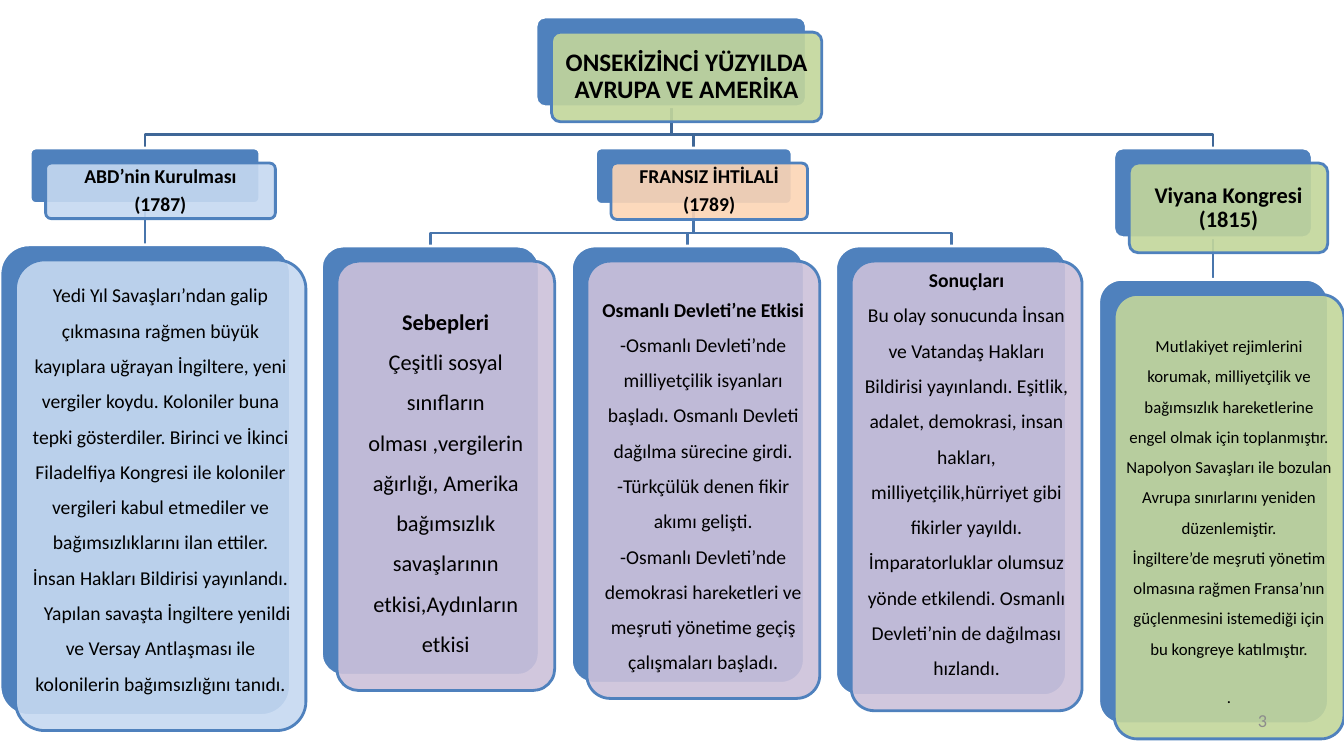
import dataclasses
import pptx
import pptx.dml.color
import pptx.enum.shapes
import pptx.enum.text
import pptx.oxml.ns
import pptx.util
import lxml.etree

Cm = pptx.util.Cm
Pt = pptx.util.Pt
ALIGN = pptx.enum.text.PP_ALIGN
MIDDLE = pptx.enum.text.MSO_ANCHOR.MIDDLE
qn = pptx.oxml.ns.qn


@dataclasses.dataclass(frozen=True)
class Theme:
    font: str = "Calibri"
    text: str = "000000"
    muted: str = "8C8C8C"
    white: str = "FFFFFF"
    accent: str = "4F81BD"
    trunk: str = "3F6797"
    branch: str = "4875AC"
    green: str = "C3D69B"
    blue: str = "C6D9F1"
    orange: str = "FCD5B5"
    purple: str = "CCC1DA"
    title: int = 18
    large: int = 16
    medium: int = 14
    small: int = 12
    number: int = 13
    line: int = 2


@dataclasses.dataclass(frozen=True)
class Box:
    left: float
    top: float
    width: float
    height: float

    @property
    def center(self):
        return self.left + self.width / 2

    @property
    def bottom(self):
        return self.top + self.height

    def moved(self, dx, dy):
        return Box(self.left + dx, self.top + dy, self.width, self.height)

    def inset(self, d):
        return Box(self.left + d, self.top + d, self.width - 2 * d, self.height - 2 * d)

    def emu(self):
        return [Cm(v) for v in (self.left, self.top, self.width, self.height)]


class Chart:
    def __init__(self, slide, theme):
        self.slide = slide
        self.theme = theme

    def rgb(self, value):
        return pptx.dml.color.RGBColor.from_string(value)

    def outline(self, line, color):
        line.color.rgb = self.rgb(color)
        line.width = Pt(self.theme.line)

    def panel(self, box, fill, line, alpha=None):
        kind = pptx.enum.shapes.MSO_SHAPE.ROUNDED_RECTANGLE
        sp = self.slide.shapes.add_shape(kind, *box.emu())
        sp.adjustments[0] = 0.1
        sp.shadow.inherit = False
        sp.fill.solid()
        sp.fill.fore_color.rgb = self.rgb(fill)
        if alpha:
            color = sp.element.spPr.find(qn("a:solidFill"))[0]
            lxml.etree.SubElement(color, qn("a:alpha")).set("val", str(alpha * 1000))
        self.outline(sp.line, line)
        return sp

    def card(self, box, fill):
        self.panel(box, self.theme.accent, self.theme.white)
        return self.panel(box.moved(0.39, 0.38), fill, self.theme.accent, 90)

    def set_text(self, sp, lines, size, bold=0, spacing=0.9, foot=0):
        tf = sp.text_frame
        tf.word_wrap = True
        tf.auto_size = pptx.enum.text.MSO_AUTO_SIZE.NONE
        tf.vertical_anchor = MIDDLE
        margin = size * 0.0106
        tf.margin_left = tf.margin_right = tf.margin_top = Cm(margin)
        tf.margin_bottom = Cm(margin + foot)
        tf.text = "\n".join(lines)
        for i, p in enumerate(tf.paragraphs):
            self.style(p, size, self.theme.text, ALIGN.CENTER, i < bold)
            p.line_spacing = spacing
            p.space_before = Pt(0)
            p.space_after = Pt(size * 0.35 if spacing < 1 else 0)
        return tf.paragraphs

    def style(self, p, size, color, align, bold=False):
        p.alignment = align
        for r in p.runs:
            r.font.name = self.theme.font
            r.font.size = Pt(size)
            r.font.bold = bold
            r.font.color.rgb = self.rgb(color)

    def heading(self, box, fill, size, lines):
        self.set_text(self.card(box, fill), lines, size, bold=len(lines))

    def detail(self, box, fill, size, lines, bold=0, foot=0):
        return self.set_text(self.card(box, fill), lines, size, bold, 1.5, foot)

    def title(self, box, fill, text):
        self.card(box, fill)
        sp = self.slide.shapes.title
        area = box.moved(0.39, 0.38).inset(0.07)
        sp.left, sp.top, sp.width, sp.height = area.emu()
        self.set_text(sp, [text], self.theme.title, bold=1)
        self.slide.shapes.element.append(sp.element)

    def link(self, parent, child, color):
        x, y = Cm(parent.center), Cm(parent.bottom)
        end_x, end_y = Cm(child.center), Cm(child.top)
        if abs(parent.center - child.center) < 0.1:
            kind = pptx.enum.shapes.MSO_CONNECTOR.STRAIGHT
            sp = self.slide.shapes.add_connector(kind, x, y, x, end_y)
            lxml.etree.SubElement(sp.element.spPr, qn("a:effectLst"))
        else:
            bend = Cm(child.top - 0.33)
            elbow = self.slide.shapes.build_freeform(x, y)
            elbow.add_line_segments([(x, bend), (end_x, bend), (end_x, end_y)], close=False)
            sp = elbow.convert_to_shape()
            sp.fill.background()
            sp.shadow.inherit = False
        self.outline(sp.line, color)

    def page_number(self, box, text):
        sp = self.slide.shapes.add_textbox(*box.emu())
        tf = sp.text_frame
        tf.word_wrap = True
        tf.vertical_anchor = MIDDLE
        tf.text = text
        self.style(tf.paragraphs[0], self.theme.number, self.theme.muted, ALIGN.RIGHT)


def main():
    prs = pptx.Presentation()
    prs.slide_width, prs.slide_height = Cm(33.87), Cm(19.05)
    t = Theme()
    s = Chart(prs.slides.add_slide(prs.slide_layouts[5]), t)

    root = Box(13.51, 0.43, 6.81, 2.26)
    usa = Box(0.76, 3.73, 5.79, 1.4)
    france = Box(15.01, 3.73, 4.95, 1.42)
    vienna = Box(28.07, 3.73, 5, 2.26)
    usa_text = Box(0, 6.17, 7.32, 11.86)
    causes = Box(8.1, 6.2, 5.49, 10.82)
    ottoman = Box(14.4, 6.2, 5.87, 11.02)
    results = Box(21.06, 6.2, 5.82, 11.33)
    vienna_text = Box(27.69, 7.04, 5.79, 11.2)

    for child in (vienna, france, usa):
        s.link(root, child, t.trunk)
    for parent, child in ((vienna, vienna_text), (france, results), (france, ottoman),
                          (france, causes), (usa, usa_text)):
        s.link(parent, child, t.branch)

    s.title(root, t.green, "ONSEKİZİNCİ YÜZYILDA AVRUPA VE AMERİKA")
    s.heading(usa, t.blue, t.medium, ["ABD’nin Kurulması", "(1787)"])
    story = s.detail(usa_text, t.blue, t.medium, [
        "Yedi Yıl Savaşları’ndan galip çıkmasına rağmen büyük kayıplara uğrayan İngiltere, yeni vergiler koydu. Koloniler buna tepki gösterdiler. Birinci ve İkinci Filadelfiya Kongresi ile koloniler vergileri kabul etmediler ve bağımsızlıklarını ilan ettiler. İnsan Hakları Bildirisi yayınlandı.",
        "Yapılan savaşta İngiltere yenildi ve Versay Antlaşması ile kolonilerin bağımsızlığını tanıdı."], foot=0.6)
    story[1]._p.get_or_add_pPr().set("indent", str(Pt(9.5)))

    s.heading(france, t.orange, t.medium, ["FRANSIZ İHTİLALİ", "(1789)"])
    s.detail(causes, t.purple, t.large, [
        "Sebepleri",
        "Çeşitli sosyal sınıfların olması ,vergilerin ağırlığı, Amerika bağımsızlık savaşlarının etkisi,Aydınların etkisi"], bold=1)
    s.detail(ottoman, t.purple, t.medium, [
        "Osmanlı Devleti’ne Etkisi",
        "-Osmanlı Devleti’nde milliyetçilik isyanları başladı. Osmanlı Devleti dağılma sürecine girdi.",
        "-Türkçülük denen fikir akımı gelişti.",
        "-Osmanlı Devleti’nde demokrasi hareketleri ve meşruti yönetime geçiş çalışmaları başladı."], bold=1)
    s.detail(results, t.purple, t.medium, [
        "Sonuçları",
        "Bu olay sonucunda İnsan ve Vatandaş Hakları Bildirisi yayınlandı. Eşitlik, adalet, demokrasi, insan hakları, milliyetçilik,hürriyet gibi fikirler yayıldı. İmparatorluklar olumsuz yönde etkilendi. Osmanlı Devleti’nin de dağılması hızlandı."], bold=1, foot=0.9)

    s.heading(vienna, t.green, t.large, ["Viyana Kongresi (1815)"])
    closing = s.detail(vienna_text, t.green, t.small, [
        "Mutlakiyet rejimlerini korumak, milliyetçilik ve bağımsızlık hareketlerine engel olmak için toplanmıştır. Napolyon Savaşları ile bozulan Avrupa sınırlarını yeniden düzenlemiştir.",
        "İngiltere’de meşruti yönetim olmasına rağmen Fransa’nın güçlenmesini istemediği için bu kongreye katılmıştır.",
        "."])[-1]
    closing.line_spacing = 0.9
    closing.space_before = Pt(22)
    closing.space_after = Pt(4.2)
    s.page_number(Box(24.28, 17.65, 7.9, 1.02), "3")
    prs.save("out.pptx")


if __name__ == "__main__":
    main()
